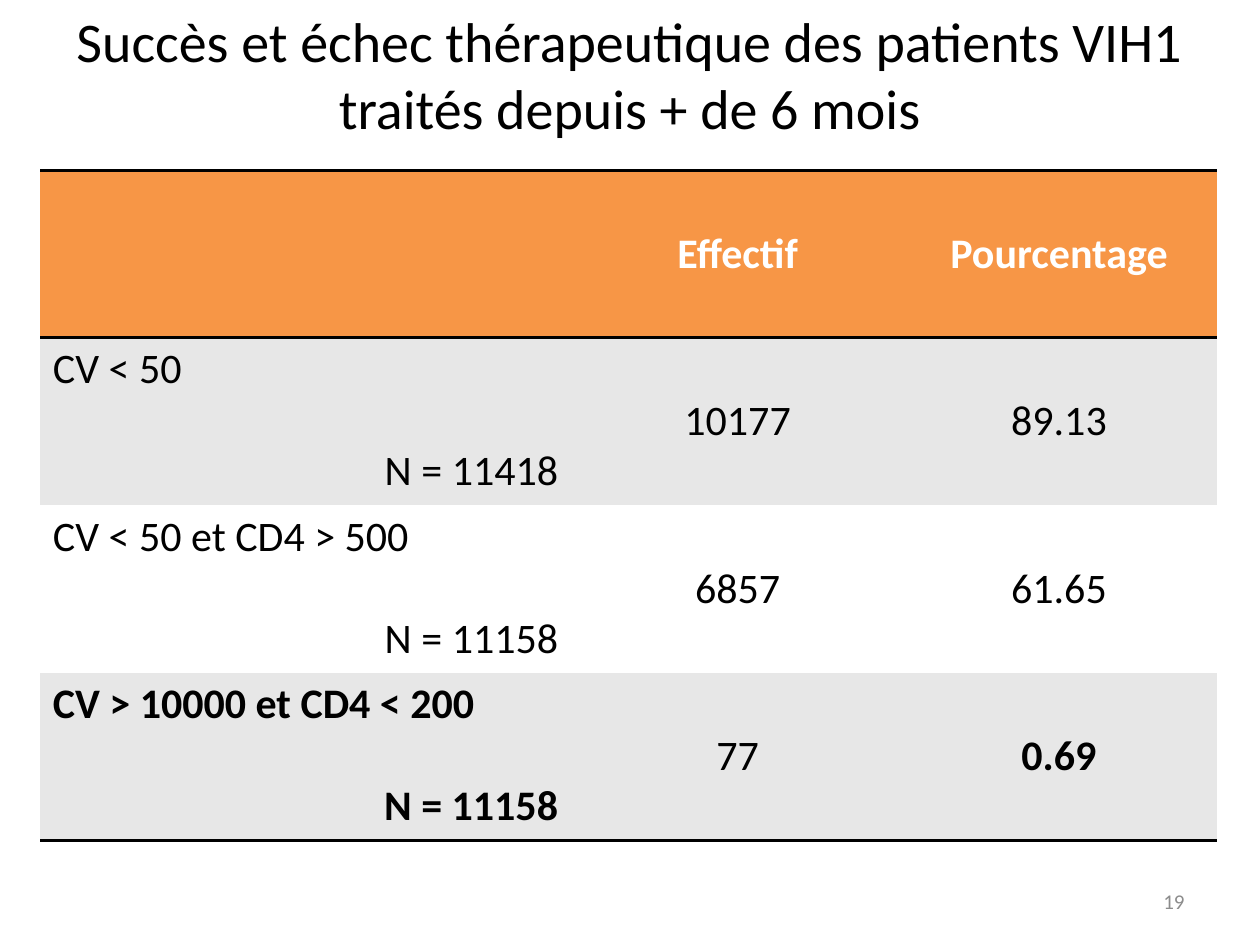
from dataclasses import dataclass

from lxml import etree
from pptx import Presentation
from pptx import util as u
from pptx.dml.color import RGBColor
from pptx.enum import text
from pptx.oxml import ns


@dataclass(frozen=True)
class Theme:
    font: str = "Calibri"
    ink: str = "000000"
    white: str = "FFFFFF"
    muted: str = "8C8C8C"
    header: str = "F79646"
    band: str = "E7E7E7"
    title_size: int = 32
    body_size: int = 24
    number_size: int = 12
    rule_width: int = 2
    line_gap: int = 29


NO_STYLE = "{2D5ABB26-0587-4C30-8999-92F81FD0307C}"
ALIGN = {"l": text.PP_ALIGN.LEFT, "c": text.PP_ALIGN.CENTER, "r": text.PP_ALIGN.RIGHT}
ANCHOR = {"t": text.MSO_ANCHOR.TOP, "m": text.MSO_ANCHOR.MIDDLE}


def write(p, content, *, size, color, font, bold=False, align="l", before=0):
    p.alignment = ALIGN[align]
    p.space_before = u.Pt(before)
    r = p.add_run()
    r.text = content
    r.font.name = font
    r.font.size = u.Pt(size)
    r.font.bold = bold
    r.font.color.rgb = RGBColor.from_string(color)


class SlideBuilder:
    def __init__(self, s, theme):
        self.s = s
        self.theme = theme

    def text(self, content, box, anchor="t", **fmt):
        sp = self.s.shapes.add_textbox(*map(u.Inches, box))
        tf = sp.text_frame
        tf.word_wrap = True
        tf.vertical_anchor = ANCHOR[anchor]
        write(tf.paragraphs[0], content, font=self.theme.font, **fmt)

    def border(self, cell, side):
        tc_pr = cell._tc.get_or_add_tcPr()
        ln = etree.SubElement(tc_pr, ns.qn(f"a:ln{side}"), w=str(u.Pt(self.theme.rule_width)))
        fill = etree.SubElement(ln, ns.qn("a:solidFill"))
        etree.SubElement(fill, ns.qn("a:srgbClr"), val=self.theme.ink)

    def cell(self, cell, lines, fill, sides="", anchor="m", **fmt):
        for side in sides:
            self.border(cell, side)
        cell.fill.solid()
        cell.fill.fore_color.rgb = RGBColor.from_string(fill)
        cell.vertical_anchor = ANCHOR[anchor]
        tf = cell.text_frame
        for i, (content, align) in enumerate(lines):
            p = tf.paragraphs[0] if i == 0 else tf.add_paragraph()
            write(p, content, font=self.theme.font, size=self.theme.body_size, align=align,
                  before=self.theme.line_gap if i else 0, **fmt)

    def table(self, left, top, widths, row_height, headings, rows):
        th = self.theme
        count = len(rows) + 1
        frame = self.s.shapes.add_table(count, len(widths), u.Inches(left), u.Inches(top),
                                        u.Inches(sum(widths)), u.Inches(row_height * count))
        tbl = frame.table
        tbl._tbl.tblPr.find(ns.qn("a:tableStyleId")).text = NO_STYLE
        for col, width in zip(tbl.columns, widths):
            col.width = u.Inches(width)
        for row in tbl.rows:
            row.height = u.Inches(row_height)
        for c, heading in enumerate(headings):
            lines = [(heading, "c")] if heading else []
            self.cell(tbl.cell(0, c), lines, th.header, "TB", color=th.white, bold=True)
        for n, (label, total, values, bold_columns) in enumerate(rows, 1):
            fill = th.band if n % 2 else th.white
            sides = "B" if n == len(rows) else ""
            first = tbl.cell(n, 0)
            first.margin_right = u.Inches(0.13)
            self.cell(first, [(label, "l"), (total, "r")], fill, sides, "t",
                      color=th.ink, bold=0 in bold_columns)
            for c, value in enumerate(values, 1):
                self.cell(tbl.cell(n, c), [(value, "c")], fill, sides,
                          color=th.ink, bold=c in bold_columns)


def main():
    th = Theme()
    prs = Presentation()
    prs.slide_width, prs.slide_height = u.Inches(10), u.Inches(7.5)
    b = SlideBuilder(prs.slides.add_slide(prs.slide_layouts[6]), th)
    b.text("19", (7.17, 6.95, 2.33, 0.4), "m", size=th.number_size, color=th.muted, align="r")
    b.text("Succès et échec thérapeutique des patients VIH1 traités depuis + de 6 mois",
           (0, 0, 10, 1.18), size=th.title_size, color=th.ink, align="c")
    b.table(0.32, 1.35, (4.24, 2.59, 2.51), 1.33, ("", "Effectif", "Pourcentage"), [
        ("CV < 50", "N = 11418", ("10177", "89.13"), ()),
        ("CV < 50 et CD4 > 500", "N = 11158", ("6857", "61.65"), ()),
        ("CV > 10000 et CD4 < 200", "N = 11158", ("77", "0.69"), (0, 2)),
    ])
    prs.save("out.pptx")


if __name__ == "__main__":
    main()
